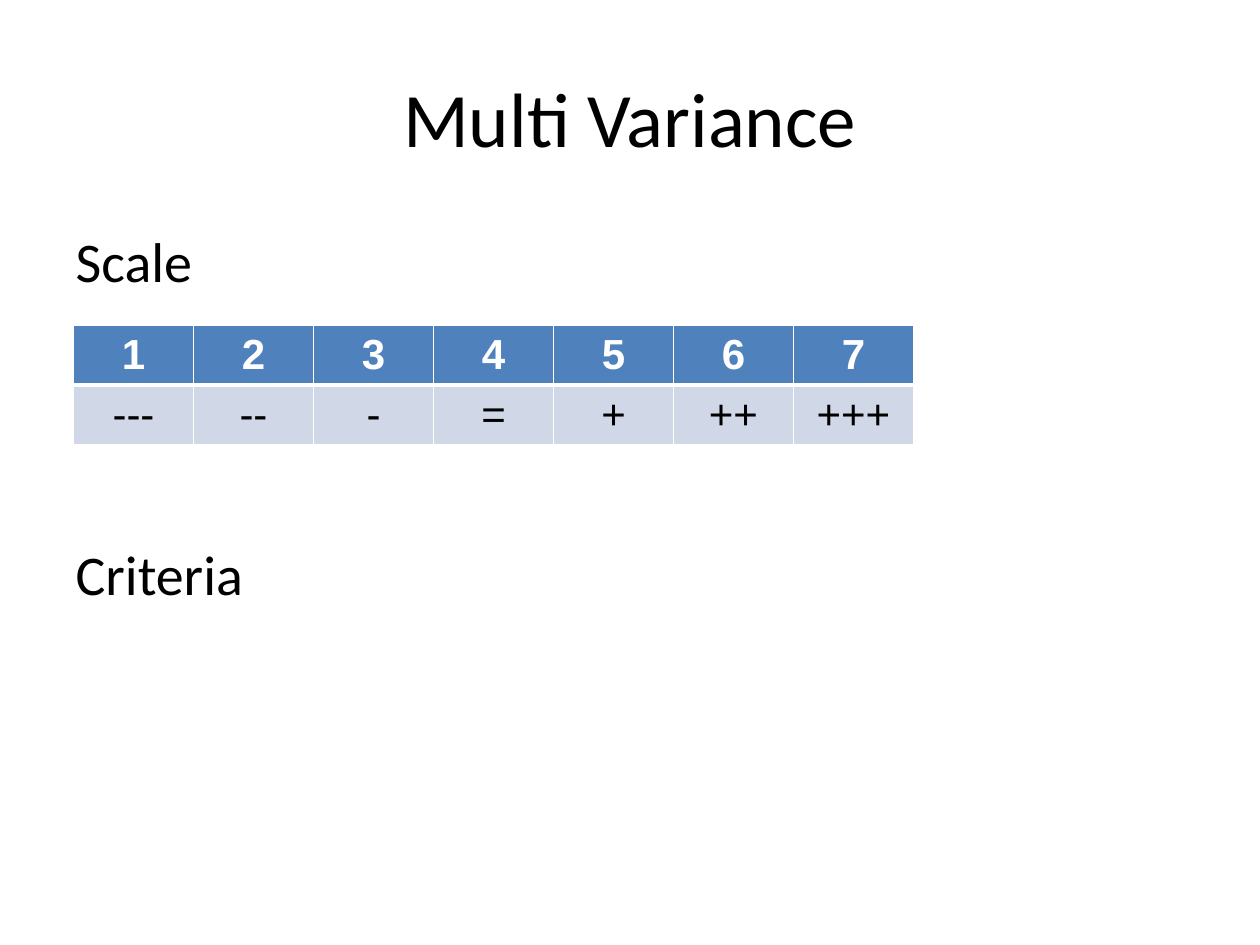
from lxml import etree
from pptx import Presentation
from pptx.dml.color import RGBColor
from pptx.enum.text import MSO_ANCHOR, PP_ALIGN
from pptx.oxml.ns import qn
from pptx.util import Inches, Pt

CENTER, LEFT = PP_ALIGN.CENTER, PP_ALIGN.LEFT
TOP, MIDDLE = MSO_ANCHOR.TOP, MSO_ANCHOR.MIDDLE
BLACK = RGBColor(0x00, 0x00, 0x00)
WHITE = RGBColor(0xFF, 0xFF, 0xFF)
BLUE = RGBColor(0x4F, 0x81, 0xBD)
PALE = RGBColor(0xD0, 0xD8, 0xE8)
COLUMNS, ROWS = 120, 90
SCALE = [
    ["1", "2", "3", "4", "5", "6", "7"],
    ["---", "--", "-", "=", "+", "++", "+++"],
]


class Deck:
    """Holds the text style, the grid and the current slide."""

    def __init__(self, prs):
        self.prs = prs
        self.s = prs.slides.add_slide(prs.slide_layouts[1])
        self.heading_font, self.table_font = "Calibri", "Arial"

    def box(self, col, row, cols, rows):
        dx, dy = self.prs.slide_width / COLUMNS, self.prs.slide_height / ROWS
        return [int(v) for v in (col * dx, row * dy, cols * dx, rows * dy)]

    def add_text(self, p, text, font, size, color, align, bold=False):
        p.alignment = align
        r = p.add_run()
        r.text = text
        r.font.name, r.font.size, r.font.bold = font, Pt(size), bold
        r.font.color.rgb = color

    def place(self, sp, grid, anchor):
        sp.left, sp.top, sp.width, sp.height = self.box(*grid)
        tf = sp.text_frame
        tf.word_wrap, tf.vertical_anchor = True, anchor
        return tf

    def title(self, text, *grid):
        tf = self.place(self.s.shapes.title, grid, MIDDLE)
        self.add_text(tf.paragraphs[0], text, self.heading_font, 44, BLACK, CENTER)

    def headings(self, texts, gap, *grid):
        tf = self.place(self.s.placeholders[1], grid, TOP)
        for i, text in enumerate(texts):
            p = tf.add_paragraph() if i else tf.paragraphs[0]
            pPr = p._p.get_or_add_pPr()
            pPr.set("marL", "0")
            pPr.set("indent", "0")
            etree.SubElement(pPr, qn("a:buNone"))
            p.space_before = Pt(gap if i else 0)
            self.add_text(p, text, self.heading_font, 32, BLACK, LEFT)

    def border(self, cell, side, width):
        ln = etree.SubElement(cell._tc.get_or_add_tcPr(), qn(f"a:ln{side}"), w=str(Pt(width)))
        fill = etree.SubElement(ln, qn("a:solidFill"))
        etree.SubElement(fill, qn("a:srgbClr"), val=str(WHITE))

    def table(self, data, *grid):
        shape = self.s.shapes.add_table(len(data), len(data[0]), *self.box(*grid))
        for i, values in enumerate(data):
            header = i == 0
            for j, text in enumerate(values):
                cell = shape.table.cell(i, j)
                for side in "LRTB":
                    heavy = side == ("B" if header else "T")
                    self.border(cell, side, 3 if heavy else 1)
                cell.fill.solid()
                cell.fill.fore_color.rgb = BLUE if header else PALE
                self.add_text(cell.text_frame.paragraphs[0], text, self.table_font, 24,
                              WHITE if header else BLACK, CENTER, header)


def main():
    prs = Presentation()
    prs.slide_width, prs.slide_height = Inches(10), Inches(7.5)
    deck = Deck(prs)
    deck.title("Multi Variance", 6, 3.6, 108, 15)
    deck.headings(["Scale", "Criteria"], 140, 6, 21, 108, 65)
    deck.table(SCALE, 7, 31, 80, 10)
    prs.save("out.pptx")


if __name__ == "__main__":
    main()
